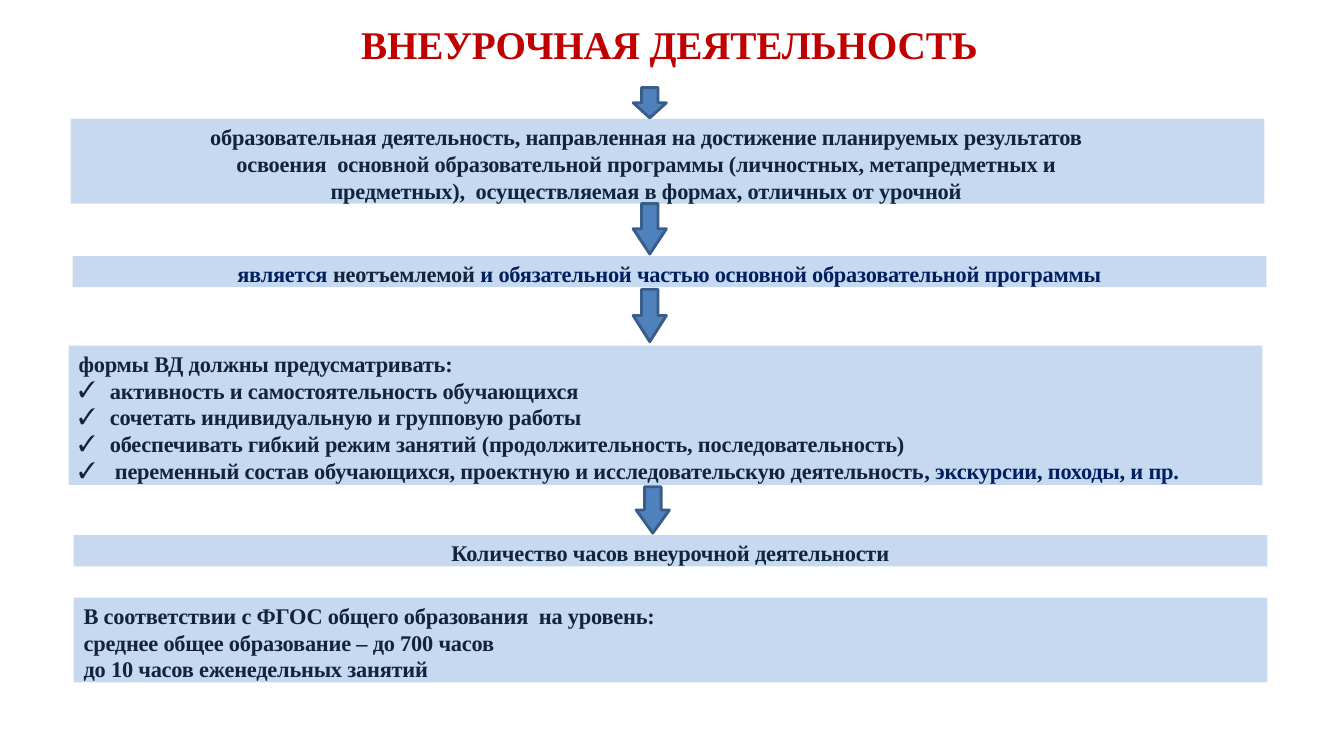
from lxml.etree import SubElement
from pptx import Presentation
from pptx.dml.color import RGBColor
from pptx.enum.shapes import MSO_SHAPE
from pptx.enum.text import MSO_ANCHOR, MSO_AUTO_SIZE, PP_ALIGN
from pptx.oxml.ns import qn
from pptx.util import Inches, Pt

FONT = "Times New Roman"
DARK, NAVY, RED = "0F243E", "001F5F", "C00000"
BOX_FILL, ARROW_FILL, ARROW_LINE = "C6D9F1", "4F81BC", "385D89"
BOX_W, ARROW_W = 11.84, 0.33


def rgb(hex_color):
    return RGBColor.from_string(hex_color)


def add_text(p, text, size=16, color=DARK, spacing=-0.15):
    r = p.add_run()
    r.text = text
    r.font.name, r.font.size, r.font.bold = FONT, Pt(size), True
    r.font.color.rgb = rgb(color)
    r._r.get_or_add_rPr().set("spc", str(round(spacing * 100)))


def set_indent(p, left, hanging=0, bullet=None):
    pPr = p._p.get_or_add_pPr()
    pPr.set("marL", str(Inches(left)))
    pPr.set("indent", str(Inches(-hanging)))
    if bullet:
        SubElement(pPr, qn("a:buFont")).set("typeface", FONT)
        SubElement(pPr, qn("a:buChar")).set("char", bullet)


def set_frame(tf, left=0, top=0.04, right=0):
    tf.word_wrap = True
    tf.auto_size = MSO_AUTO_SIZE.SHAPE_TO_FIT_TEXT
    tf.vertical_anchor = MSO_ANCHOR.TOP
    tf.margin_left, tf.margin_top = Inches(left), Inches(top)
    tf.margin_right, tf.margin_bottom = Inches(right), 0


def add_title(s, x, y, w, h, text):
    tf = s.shapes.add_textbox(Inches(x), Inches(y), Inches(w), Inches(h)).text_frame
    set_frame(tf, top=0.01)
    p = tf.paragraphs[0]
    p.alignment, p.space_before = PP_ALIGN.CENTER, Pt(1)
    add_text(p, text, size=28, color=RED, spacing=-0.1)


def add_box(s, x, y, h, lines, align=PP_ALIGN.CENTER, left=0, right=0):
    """Draw a band; each line is (runs, indent), a run is (text, colour)."""
    sp = s.shapes.add_shape(MSO_SHAPE.RECTANGLE, Inches(x), Inches(y), Inches(BOX_W), Inches(h))
    sp.shadow.inherit = False
    sp.fill.solid()
    sp.fill.fore_color.rgb = rgb(BOX_FILL)
    sp.line.fill.background()
    tf = sp.text_frame
    set_frame(tf, left=left, right=right)
    for i, (runs, indent) in enumerate(lines):
        p = tf.add_paragraph() if i else tf.paragraphs[0]
        p.alignment, p.space_before = align, Pt(0 if i else 2.6)
        set_indent(p, *indent)
        for text, color in runs:
            add_text(p, text, color=color)


def add_arrow(s, x, y, h):
    """Draw a down arrow whose head takes half of its height."""
    sp = s.shapes.add_shape(MSO_SHAPE.DOWN_ARROW, Inches(x), Inches(y), Inches(ARROW_W), Inches(h))
    sp.shadow.inherit = False
    sp.adjustments[0] = 0.5
    sp.adjustments[1] = h / 2 / min(ARROW_W, h)
    sp.fill.solid()
    sp.fill.fore_color.rgb = rgb(ARROW_FILL)
    sp.line.color.rgb = rgb(ARROW_LINE)
    sp.line.width = Pt(2.04)


def build_slide(prs):
    s = prs.slides.add_slide(prs.slide_layouts[6])
    plain, item, last_item = (0.1,), (0.41, 0.31, "✓"), (0.46, 0.36, "✓")

    definition = (
        "образовательная деятельность, направленная на достижение планируемых результатов "
        "освоения  основной образовательной программы (личностных, метапредметных и "
        "предметных),  осуществляемая в формах, отличных от урочной"
    )
    add_box(s, 0.7, 1.18, 0.84, [([(definition, DARK)], (0,))], left=0.99, right=1.41)

    add_box(s, 0.72, 2.54, 0.31, [([
        ("является ", NAVY),
        ("неотъемлемой ", DARK),
        ("и обязательной частью основной образовательной программы", NAVY),
    ], (0,))])

    add_box(s, 0.68, 3.43, 1.38, [
        ([("формы ВД должны предусматривать:", DARK)], plain),
        ([("активность и самостоятельность обучающихся", DARK)], item),
        ([("сочетать индивидуальную и групповую работы", DARK)], item),
        ([("обеспечивать гибкий режим занятий (продолжительность, последовательность)", DARK)], item),
        ([("переменный состав обучающихся, проектную и исследовательскую деятельность", DARK),
          (", экскурсии, походы, и пр.", NAVY)], last_item),
    ], align=PP_ALIGN.LEFT)

    add_box(s, 0.73, 5.31, 0.31, [([("Количество часов внеурочной деятельности", DARK)], (0,))])

    hours = (
        "В соответствии с ФГОС общего образования  на уровень:",
        "среднее общее образование – до 700 часов",
        "до 10 часов еженедельных занятий",
    )
    add_box(s, 0.73, 5.93, 0.84, [([(text, DARK)], plain) for text in hours], align=PP_ALIGN.LEFT)

    for x, y, h in ((6.28, 0.87, 0.3), (6.28, 2.02, 0.5), (6.28, 2.87, 0.52), (6.31, 4.83, 0.46)):
        add_arrow(s, x, y, h)

    add_title(s, 0.26, 0.19, 12.76, 0.49, "ВНЕУРОЧНАЯ ДЕЯТЕЛЬНОСТЬ")


def main():
    prs = Presentation()
    prs.slide_width, prs.slide_height = Inches(13.33), Inches(7.5)
    build_slide(prs)
    prs.save("out.pptx")


if __name__ == "__main__":
    main()
